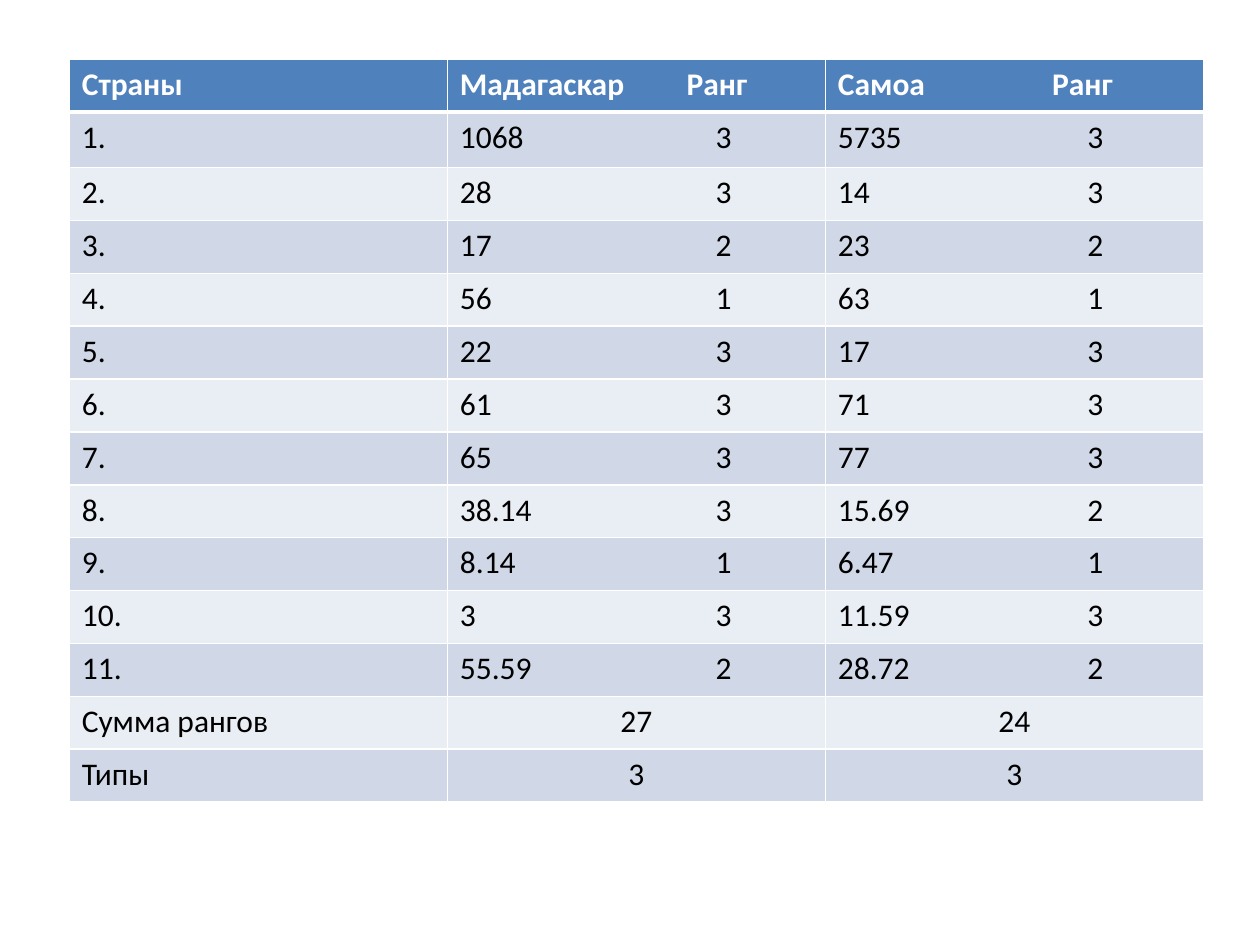
from lxml.etree import SubElement
from pptx import Presentation
from pptx.dml.color import RGBColor
from pptx.enum.text import PP_ALIGN
from pptx.oxml.ns import qn
from pptx.util import Inches, Pt

HEADER = ("Страны", "Мадагаскар\tРанг", "Самоа\tРанг")
INDICATORS = [
    ("1068", 3, "5735", 3),
    ("28", 3, "14", 3),
    ("17", 2, "23", 2),
    ("56", 1, "63", 1),
    ("22", 3, "17", 3),
    ("61", 3, "71", 3),
    ("65", 3, "77", 3),
    ("38.14", 3, "15.69", 2),
    ("8.14", 1, "6.47", 1),
    ("3", 3, "11.59", 3),
    ("55.59", 2, "28.72", 2),
]
TOTALS = [("Сумма рангов", "27", "24"), ("Типы", "3", "3")]
HEADER_TABS = (None, 1.8, 1.7)
RANK_TABS = (None, 2.03, 1.98)
BANDS = ("D0D8E8", "E9EDF4")
TEXT_FORMAT = {"name": "Calibri", "size": Pt(18)}


def color(value):
    """Turn a hex string into a colour."""
    return RGBColor.from_string(value)


def add_tab_stop(paragraph, position):
    """Place one left tab stop in a paragraph."""
    stops = SubElement(paragraph._p.get_or_add_pPr(), qn("a:tabLst"))
    SubElement(stops, qn("a:tab"), pos=str(Inches(position)), algn="l")


def set_borders(cell, widths):
    """Draw white cell borders with the given widths in points."""
    properties = cell._tc.get_or_add_tcPr()
    for side, width in widths.items():
        line = SubElement(properties, qn(f"a:ln{side}"), w=str(Pt(width)))
        fill = SubElement(line, qn("a:solidFill"))
        SubElement(fill, qn("a:srgbClr"), val="FFFFFF")


def fill_cell(cell, text, background, text_color, bold=False, tab=None):
    """Write a cell's text and set its colours and alignment."""
    cell.fill.solid()
    cell.fill.fore_color.rgb = color(background)
    paragraph = cell.text_frame.paragraphs[0]
    if tab:
        add_tab_stop(paragraph, tab)
    run = paragraph.add_run()
    run.text = text
    for attribute, value in {**TEXT_FORMAT, "bold": bold}.items():
        setattr(run.font, attribute, value)
    run.font.color.rgb = color(text_color)
    return paragraph


def add_rank_table(slide):
    """Add the table of indicators, ranks and totals."""
    ranked = [
        (f"{number}.", f"{first}\t{first_rank}", f"{second}\t{second_rank}")
        for number, (first, first_rank, second, second_rank) in enumerate(INDICATORS, 1)
    ]
    rows = [HEADER, *ranked, *TOTALS]
    table = slide.shapes.add_table(
        len(rows), len(HEADER), Inches(0.55), Inches(0.47), Inches(9), Inches(5.88)
    ).table
    for row in table.rows:
        row.height = Inches(0.42)
    table.rows[1].height = Inches(0.44)
    for row_index, texts in enumerate(rows):
        is_header = row_index == 0
        is_total = row_index > len(ranked)
        background = "4F81BD" if is_header else BANDS[(row_index - 1) % 2]
        tabs = HEADER_TABS if is_header else RANK_TABS
        for column, text in enumerate(texts):
            cell = table.cell(row_index, column)
            set_borders(cell, {"L": 1, "R": 1, "T": 3 if row_index == 1 else 1,
                               "B": 3 if is_header else 1})
            paragraph = fill_cell(
                cell, text, background, "FFFFFF" if is_header else "000000",
                is_header, None if is_total else tabs[column])
            if is_total and column:
                paragraph.alignment = PP_ALIGN.CENTER


def main():
    """Build and save the slide."""
    presentation = Presentation()
    presentation.slide_width, presentation.slide_height = Inches(10), Inches(7.5)
    slide = presentation.slides.add_slide(presentation.slide_layouts[6])
    add_rank_table(slide)
    presentation.save("out.pptx")


if __name__ == "__main__":
    main()
